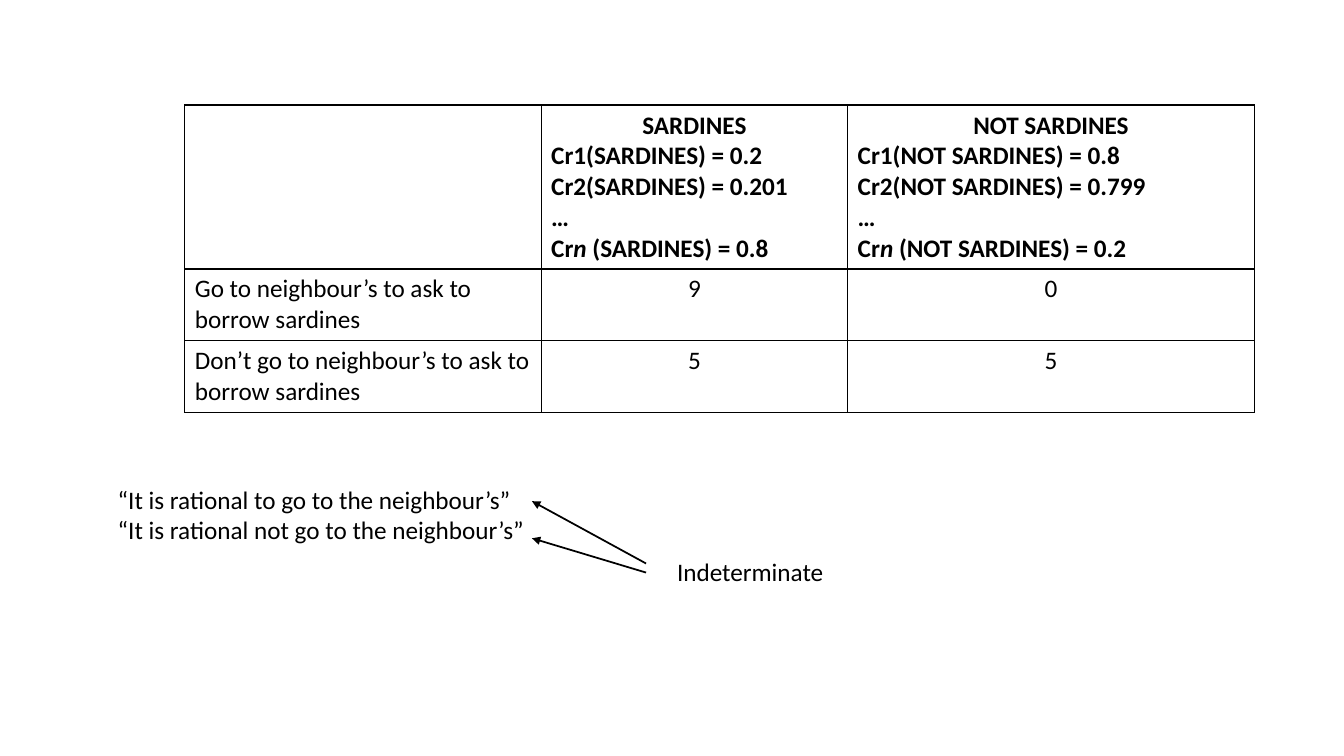
from dataclasses import dataclass

from lxml.etree import SubElement
from pptx import Presentation
from pptx.dml.color import RGBColor
from pptx.enum.shapes import MSO_CONNECTOR
from pptx.enum.text import MSO_AUTO_SIZE, PP_ALIGN
from pptx.oxml import parse_xml
from pptx.oxml.ns import nsdecls, qn
from pptx.util import Pt


@dataclass(frozen=True)
class Theme:
    font: str = "Calibri"
    size: float = 18
    ink: str = "000000"
    border: float = 1
    arrow: float = 1.25


class SlideBuilder:
    def __init__(self, prs, theme):
        self.theme = theme
        self.s = prs.slides.add_slide(prs.slide_layouts[6])

    def fill_text(self, tf, paragraphs, bold=False):
        """Add (text, alignment) paragraphs; text between asterisks is italic."""
        t = self.theme
        for i, (text, align) in enumerate(paragraphs):
            p = tf.paragraphs[0] if i == 0 else tf.add_paragraph()
            p.alignment = align
            for j, part in enumerate(text.split("*")):
                r = p.add_run()
                r.text = part
                style = {"name": t.font, "size": Pt(t.size),
                         "bold": bold, "italic": j % 2 == 1}
                for key, value in style.items():
                    setattr(r.font, key, value)
                r.font.color.rgb = RGBColor.from_string(t.ink)

    def text(self, x, y, w, h, lines):
        tf = self.s.shapes.add_textbox(Pt(x), Pt(y), Pt(w), Pt(h)).text_frame
        tf.word_wrap = True
        tf.auto_size = MSO_AUTO_SIZE.SHAPE_TO_FIT_TEXT
        self.fill_text(tf, [(line, PP_ALIGN.LEFT) for line in lines])

    def cell_borders(self, cell):
        tcPr = cell._tc.get_or_add_tcPr()
        for i, side in enumerate(("lnL", "lnR", "lnT", "lnB")):
            tcPr.insert(i, parse_xml(
                f'<a:{side} {nsdecls("a")} w="{Pt(self.theme.border)}">'
                f'<a:solidFill><a:srgbClr val="{self.theme.ink}"/></a:solidFill>'
                f'</a:{side}>'))

    def table(self, x, y, widths, heights, rows):
        tbl = self.s.shapes.add_table(
            len(heights), len(widths), Pt(x), Pt(y),
            Pt(sum(widths)), Pt(sum(heights))).table
        tbl.first_row = tbl.horz_banding = False
        for col, width in zip(tbl.columns, widths):
            col.width = Pt(width)
        for i, (row, height) in enumerate(zip(rows, heights)):
            tbl.rows[i].height = Pt(height)
            for j, paragraphs in enumerate(row):
                cell = tbl.cell(i, j)
                cell.fill.background()
                self.cell_borders(cell)
                self.fill_text(cell.text_frame, paragraphs, bold=i == 0)

    def arrow(self, start, end):
        line = self.s.shapes.add_connector(
            MSO_CONNECTOR.STRAIGHT, *map(Pt, start + end))
        line.line.color.rgb = RGBColor.from_string(self.theme.ink)
        line.line.width = Pt(self.theme.arrow)
        spPr = line._element.spPr
        SubElement(spPr.find(qn("a:ln")), qn("a:tailEnd"), type="triangle")
        SubElement(spPr, qn("a:effectLst"))


def state(name, first, second, last):
    """Heading cell: a state and its credences."""
    lines = [f"Cr1({name}) = {first}", f"Cr2({name}) = {second}",
             "…", f"Cr*n* ({name}) = {last}"]
    return [(name, PP_ALIGN.CENTER)] + [(line, PP_ALIGN.LEFT) for line in lines]


def option(label, *utilities):
    """Table row: an act and its utility in each state."""
    return [[(label, PP_ALIGN.LEFT)]] + [[(u, PP_ALIGN.CENTER)] for u in utilities]


def main():
    prs = Presentation()
    prs.slide_width, prs.slide_height = Pt(960), Pt(540)
    b = SlideBuilder(prs, Theme())

    # Decision table
    b.table(132, 75, (254.5, 219, 290.5), (117, 51, 51), [
        [[], state("SARDINES", "0.2", "0.201", "0.8"),
         state("NOT SARDINES", "0.8", "0.799", "0.2")],
        option("Go to neighbour’s to ask to borrow sardines", "9", "0"),
        option("Don’t go to neighbour’s to ask to borrow sardines", "5", "5"),
    ])

    # Claims and their verdict
    b.text(77, 342.5, 798.5, 51, ["“It is rational to go to the neighbour’s”",
                                  "“It is rational not go to the neighbour’s”"])
    b.text(476.5, 393.5, 137.5, 29, ["Indeterminate"])

    # Arrows from the verdict to each claim
    for start_y, end_y in ((409, 384.5), (402.5, 358)):
        b.arrow((461.5, start_y), (380, end_y))

    prs.save("out.pptx")


if __name__ == "__main__":
    main()
